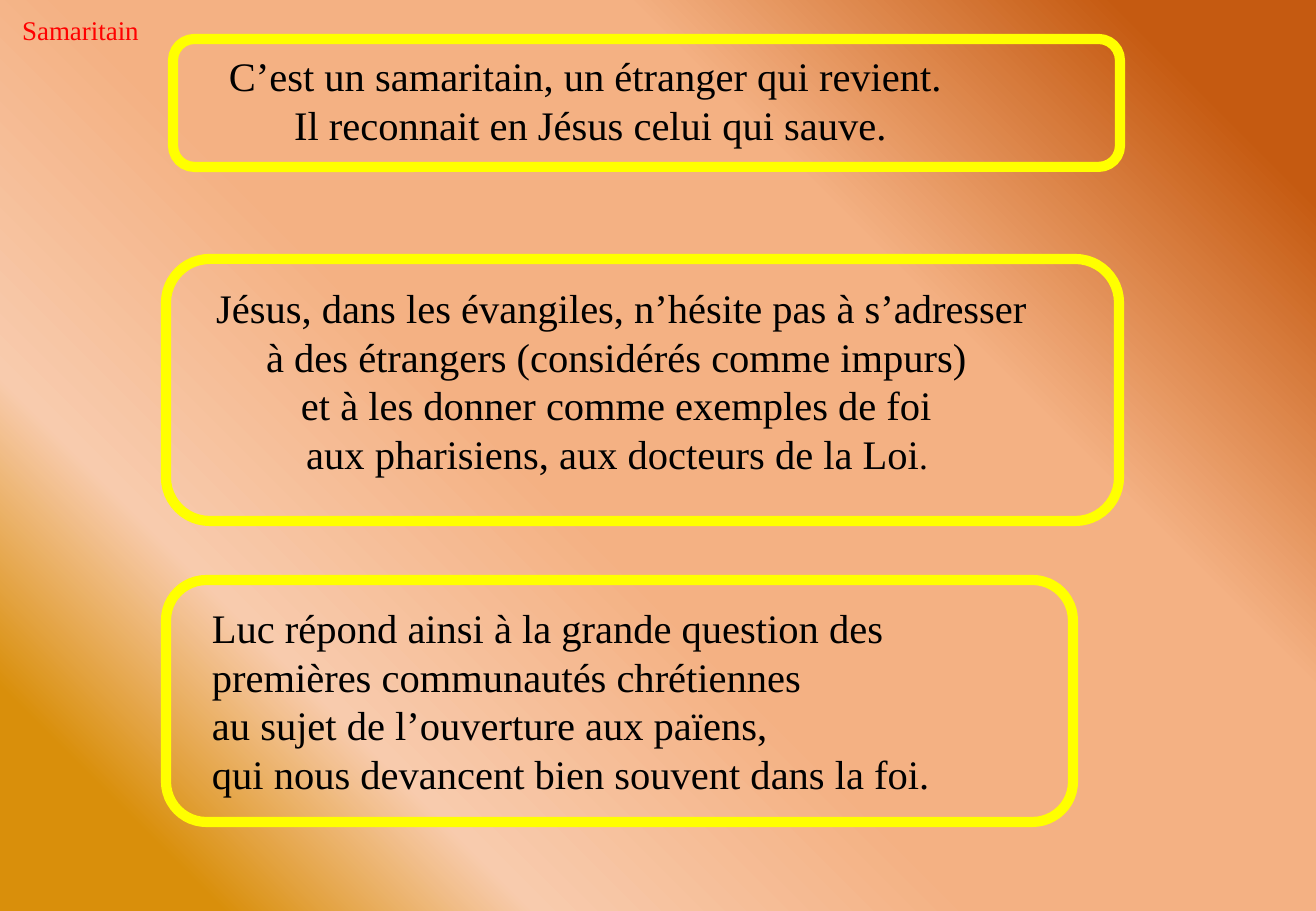
from dataclasses import dataclass

from lxml.etree import SubElement
from pptx import Presentation
from pptx.dml.color import RGBColor
from pptx.enum.shapes import MSO_SHAPE
from pptx.enum.text import MSO_ANCHOR, MSO_AUTO_SIZE, PP_ALIGN
from pptx.oxml.ns import qn
from pptx.slide import Slide
from pptx.text.text import Font
from pptx.util import Emu, Pt

EMU_PER_PX = 914400 / 121.5
COLORS = {
    "label": "FF0000",
    "text": "000000",
    "frame": "FFFF00",
    "rust": "C55A11",
    "peach": "F4B183",
    "pale": "F8CBAD",
    "amber": "D98F0B",
}
BACKGROUND_STOPS = [(9, "rust"), (31, "peach"), (56, "peach"), (76, "pale"), (90, "amber")]


@dataclass(frozen=True)
class Box:
    left: int
    top: int
    width: int
    height: int

    def emu(self) -> list[Emu]:
        return [px(n) for n in (self.left, self.top, self.width, self.height)]


@dataclass(frozen=True)
class Panel:
    frame: Box
    words: Box
    align: PP_ALIGN
    lines: tuple[str, ...]
    ending: str = ""


PANELS = [
    Panel(Box(166, 259, 953, 262), Box(200, 277, 843, 191), PP_ALIGN.CENTER, (
        "Jésus, dans les évangiles, n’hésite pas à s’adresser à des étrangers (considérés comme impurs) ",
        "et à les donner comme exemples de foi ",
        "aux pharisiens, aux docteurs de la Loi",
    ), ". "),
    Panel(Box(173, 39, 947, 128), Box(183, 45, 815, 126), PP_ALIGN.CENTER, (
        "C’est un samaritain, un étranger qui revient. ",
        "Il reconnait en Jésus celui qui sauve.",
    )),
    Panel(Box(166, 580, 907, 242), Box(200, 597, 843, 209), PP_ALIGN.LEFT, (
        "Luc répond ainsi à la grande question des premières communautés chrétiennes",
        "au sujet de l’ouverture aux païens,",
        "qui nous devancent bien souvent dans la foi.",
    )),
]


def px(length: int) -> Emu:
    return Emu(round(length * EMU_PER_PX))


def style(font: Font, size: int, color: str) -> None:
    font.name = "Times New Roman"
    font.size = Pt(size)
    font.color.rgb = RGBColor.from_string(COLORS[color])


def paint_background(slide: Slide) -> None:
    fill = slide.background.fill
    fill.gradient()
    fill.gradient_angle = 225
    stops = next(slide.background._cSld.iter(qn("a:gsLst")))
    for stop in list(stops):
        stops.remove(stop)
    for percent, color in BACKGROUND_STOPS:
        stop = SubElement(stops, qn("a:gs"), pos=str(percent * 1000))
        SubElement(stop, qn("a:srgbClr"), val=COLORS[color])


def write_label(slide: Slide) -> None:
    label = slide.shapes.title
    label.left, label.top, label.width, label.height = Box(10, 7, 145, 44).emu()
    frame = label.text_frame
    frame.text = "Samaritain"
    frame.vertical_anchor = MSO_ANCHOR.TOP
    frame.auto_size = MSO_AUTO_SIZE.SHAPE_TO_FIT_TEXT
    frame.paragraphs[0].alignment = PP_ALIGN.LEFT
    style(frame.paragraphs[0].runs[0].font, 16, "label")


def draw_panel(slide: Slide, panel: Panel) -> None:
    group = slide.shapes.add_group_shape()
    outline = group.shapes.add_shape(MSO_SHAPE.ROUNDED_RECTANGLE, *panel.frame.emu())
    outline.shadow.inherit = False
    outline.fill.background()
    outline.line.color.rgb = RGBColor.from_string(COLORS["frame"])
    outline.line.width = Pt(6)

    words = group.shapes.add_textbox(*panel.words.emu()).text_frame
    words.word_wrap = True
    words.auto_size = MSO_AUTO_SIZE.SHAPE_TO_FIT_TEXT
    words.text = "\n".join(panel.lines)
    for paragraph in words.paragraphs:
        paragraph.alignment = panel.align
        style(paragraph.runs[0].font, 24, "text")
    if panel.ending:
        ending = words.paragraphs[-1].add_run()
        ending.text = panel.ending
        style(ending.font, 21, "text")


def main() -> None:
    """Build the slide about the Samaritan and save it."""
    deck = Presentation()
    deck.slide_width, deck.slide_height = px(1316), px(911)
    slide = deck.slides.add_slide(deck.slide_layouts[5])
    paint_background(slide)
    write_label(slide)
    for panel in PANELS:
        draw_panel(slide, panel)
    deck.save("out.pptx")


if __name__ == "__main__":
    main()
